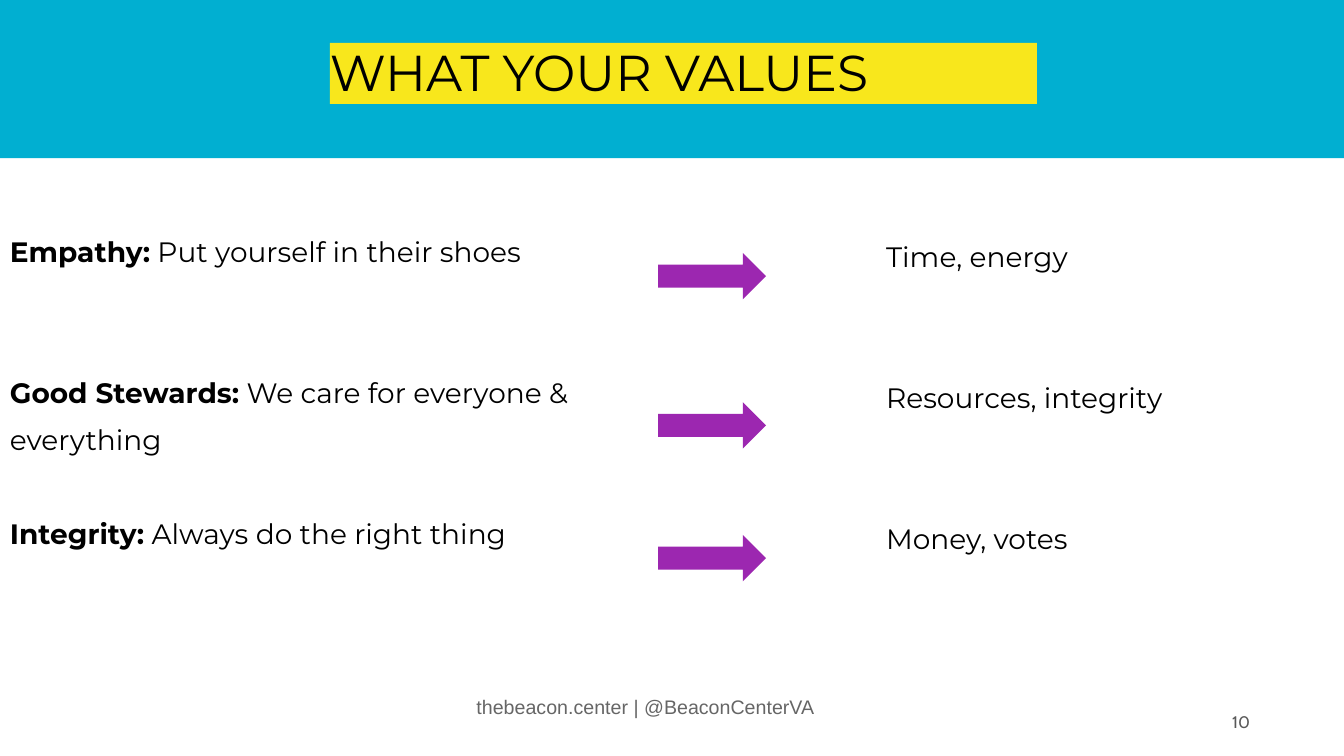
import pptx
import pptx.dml.color
import pptx.enum.shapes
import pptx.enum.text
import pptx.util

Pt = pptx.util.Pt
RGBColor = pptx.dml.color.RGBColor
Align = pptx.enum.text.PP_ALIGN
Anchor = pptx.enum.text.MSO_ANCHOR
Shape = pptx.enum.shapes.MSO_SHAPE

BLACK = RGBColor(0x00, 0x00, 0x00)
CYAN = RGBColor(0x01, 0xAF, 0xD1)
YELLOW = RGBColor(0xF8, 0xE7, 0x1C)
PURPLE = RGBColor(0x9C, 0x27, 0xB0)
NUMBER_GRAY = RGBColor(0x59, 0x59, 0x59)
FOOTER_GRAY = RGBColor(0x66, 0x66, 0x66)

LINE_SPACING = 0.9
ITEM_GAP = 79.1
WRAPPED_ITEM_GAP = 45.4
WRAP_GAP = 12
ARROW_TOPS = (180.7, 287.3, 382.1)


def write_run(paragraph, text, size=20, font="Montserrat", color=BLACK, bold=False):
    run = paragraph.add_run()
    run.text = text
    run.font.size = Pt(size)
    run.font.name = font
    run.font.bold = bold
    run.font.color.rgb = color


def format_frame(shape, anchor=Anchor.TOP, inset=3.6, side_inset=7.2):
    frame = shape.text_frame
    frame.word_wrap = True
    frame.auto_size = pptx.enum.text.MSO_AUTO_SIZE.NONE
    frame.vertical_anchor = anchor
    frame.margin_left = frame.margin_right = Pt(side_inset)
    frame.margin_top = frame.margin_bottom = Pt(inset)
    return frame


def add_text_box(slide, left, top, width, height, **frame_format):
    box = slide.shapes.add_textbox(Pt(left), Pt(top), Pt(width), Pt(height))
    return format_frame(box, **frame_format)


def add_label(slide, bounds, text, align, anchor, inset, **text_format):
    frame = add_text_box(slide, *bounds, anchor=anchor, inset=inset)
    paragraph = frame.paragraphs[0]
    paragraph.alignment = align
    write_run(paragraph, text, **text_format)


def add_item_list(slide, bounds, items):
    frame = add_text_box(slide, *bounds)
    for index, (gap, heading, text) in enumerate(items):
        paragraph = frame.add_paragraph() if index else frame.paragraphs[0]
        paragraph.line_spacing = LINE_SPACING
        paragraph.space_before = Pt(gap)
        if heading:
            write_run(paragraph, heading, bold=True)
        write_run(paragraph, text)


def fill_shape(shape, color):
    shape.fill.solid()
    shape.fill.fore_color.rgb = color
    shape.line.fill.background()


def add_filled_shape(slide, kind, left, top, width, height, color):
    shape = slide.shapes.add_shape(kind, Pt(left), Pt(top), Pt(width), Pt(height))
    shape.shadow.inherit = False
    fill_shape(shape, color)
    return shape


def write_title(slide):
    title = slide.shapes.title
    title.left, title.top = Pt(235.7), Pt(30.7)
    title.width, title.height = Pt(505), Pt(43.6)
    fill_shape(title, YELLOW)
    paragraph = format_frame(title, inset=3.9, side_inset=0).paragraphs[0]
    paragraph.alignment = Align.LEFT
    paragraph.line_spacing = LINE_SPACING
    paragraph.space_before = Pt(0)
    write_run(paragraph, "WHAT YOUR VALUES", size=36)


def main():
    presentation = pptx.Presentation()
    presentation.slide_width, presentation.slide_height = Pt(960), Pt(540)
    slide = presentation.slides.add_slide(presentation.slide_layouts[5])

    band = add_filled_shape(slide, Shape.RECTANGLE, 0, 0, 960, 113, CYAN)
    slide.shapes.title._element.addprevious(band._element)
    write_title(slide)

    add_item_list(slide, (0, 167, 566, 275), [
        (WRAP_GAP, "Empathy:", " Put yourself in their shoes"),
        (ITEM_GAP, "Good Stewards:", " We care for everyone &"),
        (WRAP_GAP, "", "everything"),
        (WRAPPED_ITEM_GAP, "Integrity:", " Always do the right thing"),
    ])
    add_item_list(slide, (625.9, 170, 299.5, 275), [
        (WRAP_GAP, "", "Time, energy"),
        (ITEM_GAP, "", "Resources, integrity"),
        (ITEM_GAP, "", "Money, votes"),
    ])
    for top in ARROW_TOPS:
        add_filled_shape(slide, Shape.RIGHT_ARROW, 470.2, top, 77, 33.1, PURPLE)

    add_label(slide, (284.4, 488.9, 353.5, 30.2), "thebeacon.center | @BeaconCenterVA",
              Align.CENTER, Anchor.TOP, 7.2, size=14, font="Arial", color=FOOTER_GRAY)
    add_label(slide, (678.2, 501.8, 221.8, 27.4), "10",
              Align.RIGHT, Anchor.MIDDLE, 3.6, size=12, font="Cabin", color=NUMBER_GRAY)
    presentation.save("out.pptx")


if __name__ == "__main__":
    main()
